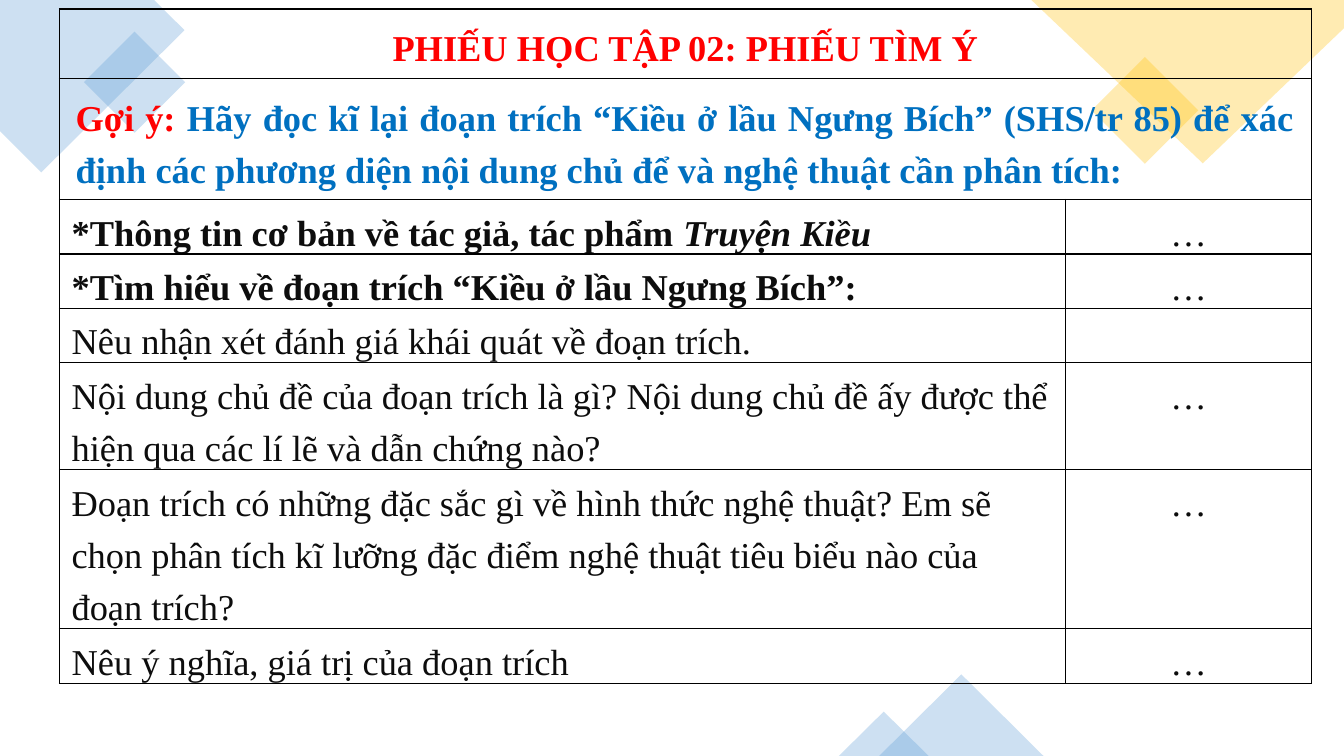
from pptx import Presentation
from pptx.dml.color import RGBColor
from pptx.enum.shapes import MSO_SHAPE as Shape
from pptx.enum.text import PP_ALIGN as Align
from pptx.oxml import parse_xml
from pptx.oxml.ns import nsdecls
from pptx.util import Inches, Pt

BLUE, YELLOW = "5B9BD5", "FFC000"
RED, HINT_BLUE, DARK = "FF0000", "0070C0", "0D0D0D"


def color(hex_code):
    return RGBColor.from_string(hex_code)


def tint(shape, hex_code):
    shape.shadow.inherit = False
    shape.fill.solid()
    shape.fill.fore_color.rgb = color(hex_code)
    shape.line.fill.background()
    solid = shape.fill._xPr.solidFill
    solid[0].append(parse_xml(f'<a:alpha {nsdecls("a")} val="30000"/>'))


deck = Presentation()
deck.slide_width, deck.slide_height = Inches(13.33), Inches(7.5)
page = deck.slides.add_slide(deck.slide_layouts[6])

corners = [
    (BLUE, [(1.53, 0), (0, 0), (0, 1.3), (0.41, 1.71), (1.83, 0.3)]),
    (YELLOW, [(13.33, 0), (10.23, 0), (11.93, 1.62), (13.33, 0.28)]),
]
for hex_code, points in corners:
    (start_x, start_y), *others = [(Inches(x), Inches(y)) for x, y in points]
    outline = page.shapes.build_freeform(start_x, start_y)
    outline.add_line_segments(others, close=True)
    tint(outline.convert_to_shape(), hex_code)

ornaments = [
    (Shape.RECTANGLE, 0.98, 0.46, 0.71, 0.71, 315, BLUE),
    (Shape.RECTANGLE, 10.98, 0.72, 0.75, 0.75, 315, YELLOW),
    (Shape.ISOSCELES_TRIANGLE, 8.72, 6.69, 1.63, 0.81, 0, BLUE),
    (Shape.ISOSCELES_TRIANGLE, 8.32, 7.06, 0.89, 0.44, 0, BLUE),
]
for kind, left, top, width, height, angle, hex_code in ornaments:
    ornament = page.shapes.add_shape(
        kind, Inches(left), Inches(top), Inches(width), Inches(height))
    ornament.rotation = angle
    tint(ornament, hex_code)

heading = [("PHIẾU HỌC TẬP 02: PHIẾU TÌM Ý", RED, False)]
hint = [
    ("Gợi ý: ", RED, False),
    ("Hãy đọc kĩ lại đoạn trích “Kiều ở lầu Ngưng Bích” (SHS/tr 85) để xác "
     "định các phương diện nội dung chủ để và nghệ thuật cần phân tích:", HINT_BLUE, False),
]
author = [
    ("*Thông tin cơ bản về tác giả, tác phẩm ", DARK, False),
    ("Truyện Kiều", DARK, True),
]
excerpt = [("*Tìm hiểu về đoạn trích “Kiều ở lầu Ngưng Bích”:", DARK, False)]
remark = [("Nêu nhận xét đánh giá khái quát về đoạn trích.", DARK, False)]
theme = [("Nội dung chủ đề của đoạn trích là gì? Nội dung chủ đề ấy được thể "
          "hiện qua các lí lẽ và dẫn chứng nào?", DARK, False)]
art = [("Đoạn trích có những đặc sắc gì về hình thức nghệ thuật? Em sẽ chọn "
        "phân tích kĩ lưỡng đặc điểm nghệ thuật tiêu biểu nào của đoạn trích?", DARK, False)]
meaning = [("Nêu ý nghĩa, giá trị của đoạn trích", DARK, False)]
dots = [("…", DARK, False)]

rows = [
    (0.69, heading, [], True, Align.CENTER),
    (1.15, hint, [], True, Align.JUSTIFY),
    (0.54, author, dots, True, Align.LEFT),
    (0.54, excerpt, dots, True, Align.LEFT),
    (0.54, remark, [], False, Align.LEFT),
    (1.01, theme, dots, False, Align.LEFT),
    (1.01, art, dots, False, Align.LEFT),
    (0.54, meaning, dots, False, Align.LEFT),
]
total = sum(row[0] for row in rows)
table = page.shapes.add_table(
    len(rows), 2, Inches(0.59), Inches(0.09), Inches(12.42), Inches(total)).table
table.first_row = table.horz_banding = False
table.columns[0].width, table.columns[1].width = Inches(9.98), Inches(2.44)

for index, (height, question, answer, bold, align) in enumerate(rows):
    table.rows[index].height = Inches(height)
    merged = index < 2
    if merged:
        table.cell(index, 0).merge(table.cell(index, 1))
    side, top, bottom = (0.16, 0.08, 0.08) if merged else (0.12, 0.02, 0)
    contents = [(question, bold, align), (answer, False, Align.CENTER)]
    for column, (spans, heavy, alignment) in enumerate(contents):
        cell = table.cell(index, column)
        cell.margin_left = cell.margin_right = Inches(side)
        cell.margin_top, cell.margin_bottom = Inches(top), Inches(bottom)
        for edge in ("lnL", "lnR", "lnT", "lnB"):
            cell._tc.get_or_add_tcPr().append(parse_xml(
                f'<a:{edge} {nsdecls("a")} w="12700"><a:solidFill>'
                f'<a:srgbClr val="000000"/></a:solidFill></a:{edge}>'))
        cell.fill.background()
        if not spans:
            continue
        para = cell.text_frame.paragraphs[0]
        para.alignment = alignment
        para.line_spacing, para.space_after = 1.3, Pt(10)
        para.font.name, para.font.size = "Times New Roman", Pt(26)
        para.font.bold = heavy
        for text, hex_code, italic in spans:
            span = para.add_run()
            span.text = text
            span.font.color.rgb = color(hex_code)
            if italic:
                span.font.italic = True

deck.save("out.pptx")
